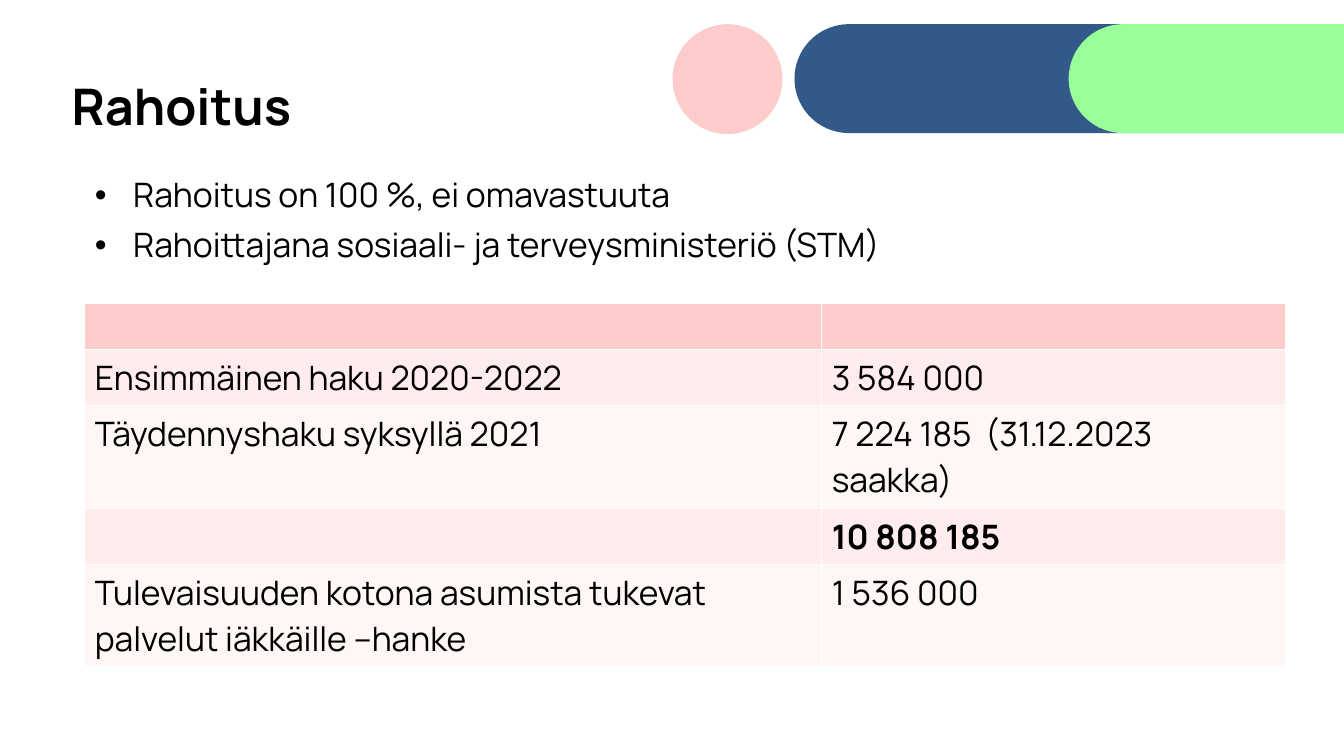
import math

from lxml import etree
from pptx import Presentation
from pptx.dml.color import RGBColor
from pptx.enum.shapes import MSO_SHAPE
from pptx.enum.text import MSO_ANCHOR, MSO_AUTO_SIZE, PP_ALIGN
from pptx.oxml.ns import qn
from pptx.util import Pt

PX = 9144  # EMU per px, 100 px to the inch
SLIDE_W, SLIDE_H = 1333, 750
FONT = "Manrope"
BLACK, WHITE = "000000", "FFFFFF"
NAVY, GREEN, PINK = "335989", "99FF99", "FFCCCC"
BANDS = ["FFECEC", "FFF6F6"]
OVAL = MSO_SHAPE.OVAL
LEFT = PP_ALIGN.LEFT
TOP, BOTTOM = MSO_ANCHOR.TOP, MSO_ANCHOR.BOTTOM
NO_AUTOFIT = MSO_AUTO_SIZE.NONE

HEADING = "Rahoitus"
FUNDING_POINTS = [
    "Rahoitus on 100 %, ei omavastuuta",
    "Rahoittajana sosiaali- ja terveysministeriö (STM)",
]
GRANTS = [
    ("", ""),
    ("Ensimmäinen haku 2020-2022", "3 584 000"),
    ("Täydennyshaku syksyllä 2021", "7 224 185  (31.12.2023 saakka)"),
    ("", "10 808 185"),
    ("Tulevaisuuden kotona asumista tukevat palvelut iäkkäille –hanke", "1 536 000"),
]
TOTAL_ROW = 3
GRANT_COLUMNS = [731, 460]
GRANT_ROWS = [46, 55, 102, 55, 101]


def px(length):
    return round(length * PX)


def colour(hex_string):
    return RGBColor.from_string(hex_string)


def write(paragraph, text, size, bold=False):
    run = paragraph.add_run()
    run.text = text
    run.font.name = FONT
    run.font.size = Pt(size)
    run.font.bold = bold
    run.font.color.rgb = colour(BLACK)


def paint(shape, hex_string):
    shape.shadow.inherit = False
    shape.fill.solid()
    shape.fill.fore_color.rgb = colour(hex_string)
    shape.line.fill.background()


def place(placeholder, box, anchor):
    placeholder.left, placeholder.top, placeholder.width, placeholder.height = map(px, box)
    frame = placeholder.text_frame
    frame.word_wrap = True
    frame.auto_size = NO_AUTOFIT
    frame.vertical_anchor = anchor
    return frame


def add_bar(slide, left, top, right, height, fill):
    """A bar with a round left end and a straight right end."""
    radius = height / 2
    angles = [math.radians(90 + 3 * step) for step in range(61)]
    round_end = [
        (px(left + radius + radius * math.cos(a)), px(top + radius - radius * math.sin(a)))
        for a in angles
    ]
    outline = slide.shapes.build_freeform(px(right), px(top), scale=1.0)
    outline.add_line_segments(round_end + [(px(right), px(top + height))], close=True)
    paint(outline.convert_to_shape(), fill)


def add_banner(slide, box):
    left, top, width, height = box
    add_bar(slide, left + 121, top, left + width, height, NAVY)
    add_bar(slide, left + 393, top, left + width, height, GREEN)
    dot = slide.shapes.add_shape(OVAL, px(left), px(top), px(109), px(109))
    paint(dot, PINK)


def add_heading(slide, box):
    paragraph = place(slide.shapes.title, box, BOTTOM).paragraphs[0]
    paragraph.alignment = LEFT
    paragraph.line_spacing = 0.9
    write(paragraph, HEADING, 36, bold=True)


def add_points(slide, box):
    frame = place(slide.placeholders[1], box, TOP)
    frame.margin_top = px(60)
    for index, point in enumerate(FUNDING_POINTS):
        paragraph = frame.add_paragraph() if index else frame.paragraphs[0]
        paragraph.alignment = LEFT
        paragraph.line_spacing = 0.9
        paragraph.space_before = Pt(10)
        write(paragraph, point, 24)
        # Hanging bullet
        properties = paragraph._p.get_or_add_pPr()
        properties.set("marL", str(px(38)))
        properties.set("indent", str(px(-38)))
        etree.SubElement(properties, qn("a:buFont")).set("typeface", "Arial")
        etree.SubElement(properties, qn("a:buChar")).set("char", "•")


def add_borders(cell):
    properties = cell._tc.get_or_add_tcPr()
    for side in ("a:lnL", "a:lnR", "a:lnT", "a:lnB"):
        line = etree.SubElement(properties, qn(side), w=str(Pt(1)))
        fill = etree.SubElement(line, qn("a:solidFill"))
        etree.SubElement(fill, qn("a:srgbClr"), val=WHITE)


def add_grants(slide, left, top):
    size = px(sum(GRANT_COLUMNS)), px(sum(GRANT_ROWS))
    grants = slide.shapes.add_table(
        len(GRANT_ROWS), len(GRANT_COLUMNS), px(left), px(top), *size
    ).table
    grants.first_row = grants.horz_banding = False
    for column, width in zip(grants.columns, GRANT_COLUMNS):
        column.width = px(width)
    for index, (row, height, texts) in enumerate(zip(grants.rows, GRANT_ROWS, GRANTS)):
        row.height = px(height)
        for cell, text in zip(row.cells, texts):
            add_borders(cell)
            cell.fill.solid()
            cell.fill.fore_color.rgb = colour(BANDS[(index - 1) % 2] if index else PINK)
            if text:
                write(cell.text_frame.paragraphs[0], text, 24, bold=index == TOTAL_ROW)


def main():
    deck = Presentation()
    deck.slide_width, deck.slide_height = px(SLIDE_W), px(SLIDE_H)
    slide = deck.slides.add_slide(deck.slide_layouts[1])
    add_banner(slide, (667, 24, SLIDE_W - 667, 108))
    add_heading(slide, (61, 15, 567, 125))
    add_points(slide, (84, 117, 1087, 522))
    add_grants(slide, 84, 301)
    deck.save("out.pptx")


if __name__ == "__main__":
    main()
